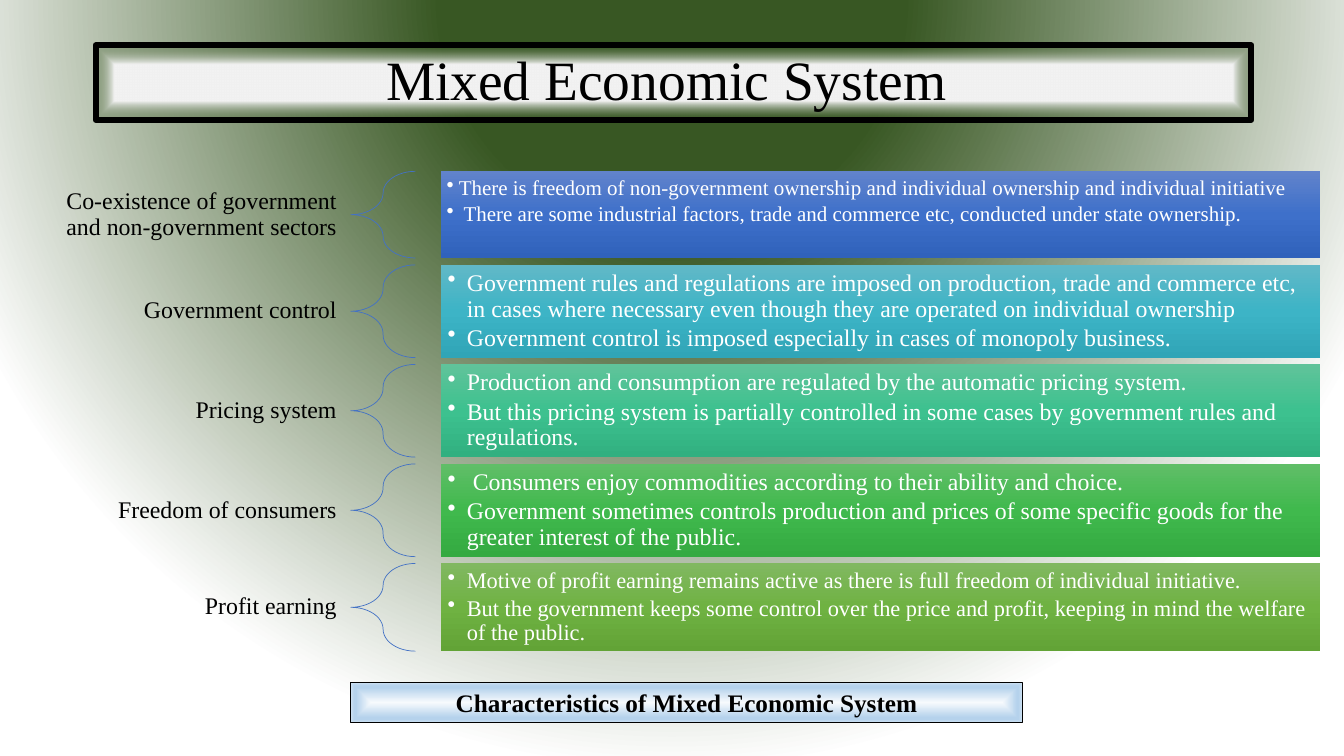
from lxml import etree
from pptx import Presentation
from pptx.dml.color import RGBColor
from pptx.enum import shapes, text
from pptx.oxml import ns
from pptx.util import Inches, Pt

FONT = "Times New Roman"
FOCUS_CENTER = {"l": 50, "t": 50, "r": 50, "b": 50}


def paint_gradient(fill, owner, stops, path=None, focus=None):
    """Fill with (position %, colour, opacity %) stops: along a path, else top to bottom."""
    fill.gradient()
    gradient = owner.find(".//" + ns.qn("a:gradFill"))
    gradient.clear()
    gradient.set("rotWithShape", "1")
    stop_list = etree.SubElement(gradient, ns.qn("a:gsLst"))
    for position, color, opacity in stops:
        stop = etree.SubElement(stop_list, ns.qn("a:gs"), pos=str(position * 1000))
        rgb = etree.SubElement(stop, ns.qn("a:srgbClr"), val=color)
        if opacity < 100:
            etree.SubElement(rgb, ns.qn("a:alpha"), val=str(opacity * 1000))
    if path:
        path_node = etree.SubElement(gradient, ns.qn("a:path"), path=path)
        etree.SubElement(path_node, ns.qn("a:fillToRect"),
                         {side: str(share * 1000) for side, share in focus.items()})
    else:
        etree.SubElement(gradient, ns.qn("a:lin"), ang="5400000", scaled="0")


def write(frame, lines, size, color, align, spacing=0.9, bold=False, indent=0, after=0):
    frame.word_wrap = True
    for index, line in enumerate(lines):
        paragraph = frame.paragraphs[0] if index == 0 else frame.add_paragraph()
        paragraph.text = line
        paragraph.alignment = align
        paragraph.line_spacing = spacing
        paragraph.space_after = Pt(after)
        if indent:
            properties = paragraph._p.get_or_add_pPr()
            properties.set("marL", str(Inches(indent)))
            properties.set("indent", str(-Inches(indent)))
            etree.SubElement(properties, ns.qn("a:buChar"), char="•")
        font = paragraph.runs[0].font
        font.name, font.size, font.bold = FONT, Pt(size), bold
        font.color.rgb = RGBColor.from_string(color)


prs = Presentation()
prs.slide_width, prs.slide_height = Inches(13.33), Inches(7.5)
slide = prs.slides.add_slide(prs.slide_layouts[6])
paint_gradient(slide.background.fill, slide._element,
               [(30, "385723", 100), (100, "FFFFFF", 100)],
               "circle", {"l": 50, "t": -80, "r": 50, "b": 180})

# Title and caption plates
plates = [
    ("Mixed Economic System", (0.95, 0.45, 11.46, 0.74), 39.6, 0.9, False, 4.5, 0.24,
     [(49, "F2F2F2", 100), (99, "385723", 28)]),
    ("Characteristics of Mixed Economic System", (3.48, 6.77, 6.66, 0.4), 18, 1, True, 0.75, 0.1,
     [(0, "F7FAFD", 100), (74, "B5D2EC", 100), (83, "B5D2EC", 100), (100, "CEE1F2", 100)]),
]
for wording, box, size, spacing, bold, border, right_inset, stops in plates:
    plate = slide.shapes.add_shape(shapes.MSO_SHAPE.RECTANGLE, *map(Inches, box))
    plate.shadow.inherit = False
    paint_gradient(plate.fill, plate._element, stops, "shape", FOCUS_CENTER)
    plate.line.color.rgb = RGBColor.from_string("000000")
    plate.line.width = Pt(border)
    etree.SubElement(plate.line._ln, ns.qn("a:round"))
    plate.text_frame.margin_right = Inches(right_inset)
    plate.text_frame.vertical_anchor = text.MSO_ANCHOR.MIDDLE
    write(plate.text_frame, [wording], size, "000000", text.PP_ALIGN.CENTER, spacing, bold)

# Characteristics: label, height, text size, bullet indent, inset, anchor, colours, points
TOP, BOTTOM = 1.7, 6.46
MIDDLE = text.MSO_ANCHOR.MIDDLE
characteristics = [
    ("Co-existence of government and non-government sectors", 0.86, 15, 0.12, 0.06,
     text.MSO_ANCHOR.TOP, ("6183CB", "3E70CA", "3062BB"),
     ["There is freedom of non-government ownership and individual ownership and individual initiative",
      " There are some industrial factors, trade and commerce etc, conducted under state ownership."]),
    ("Government control", 0.92, 17, 0.19, 0.07, MIDDLE, ("61B8C7", "3DB4C6", "30A5B7"),
     ["Government rules and regulations are imposed on production, trade and commerce etc, "
      "in cases where necessary even though they are operated on individual ownership",
      "Government control is imposed especially in cases of monopoly business."]),
    ("Pricing system", 0.92, 17, 0.19, 0.07, MIDDLE, ("60C39A", "3DC18F", "31B080"),
     ["Production and consumption are regulated by the automatic pricing system.",
      "But this pricing system is partially controlled in some cases by government rules "
      "and regulations."]),
    ("Freedom of consumers", 0.92, 17, 0.19, 0.07, MIDDLE, ("60BE68", "40B94D", "34AA41"),
     [" Consumers enjoy commodities according to their ability and choice.",
      "Government sometimes controls production and prices of some specific goods for the "
      "greater interest of the public."]),
    ("Profit earning", 0.87, 16, 0.19, 0.07, MIDDLE, ("81B861", "6FB242", "62A336"),
     ["Motive of profit earning remains active as there is full freedom of individual initiative.",
      "But the government keeps some control over the price and profit, keeping in mind the "
      "welfare of the public."]),
]
gap = (BOTTOM - TOP - sum(row[1] for row in characteristics)) / (len(characteristics) - 1)

top = TOP
for name, height, size, indent, inset, anchor, colors, points in characteristics:
    y, h = Inches(top), Inches(height)

    label = slide.shapes.add_textbox(Inches(0.27), y, Inches(3.2), h).text_frame
    label.margin_left = label.margin_right = Inches(0.13)
    label.vertical_anchor = MIDDLE
    write(label, [name], 17, "000000", text.PP_ALIGN.RIGHT)

    brace = slide.shapes.add_shape(shapes.MSO_SHAPE.LEFT_BRACE, Inches(3.48), y, Inches(0.64), h)
    brace.shadow.inherit = False
    brace.adjustments[0] = 0.35
    brace.fill.background()
    brace.line.color.rgb = RGBColor.from_string("4472C4")
    brace.line.width = Pt(0.5)

    bar = slide.shapes.add_shape(shapes.MSO_SHAPE.RECTANGLE, Inches(4.37), y, Inches(8.72), h)
    bar.shadow.inherit = False
    paint_gradient(bar.fill, bar._element,
                   [(position, color, 100) for position, color in zip((0, 50, 100), colors)])
    bar.line.fill.background()
    frame = bar.text_frame
    frame.margin_left = frame.margin_right = frame.margin_top = frame.margin_bottom = Inches(inset)
    frame.vertical_anchor = anchor
    write(frame, points, size, "FFFFFF", text.PP_ALIGN.LEFT, indent=indent, after=0.15 * size)

    top += height + gap

prs.save("out.pptx")
